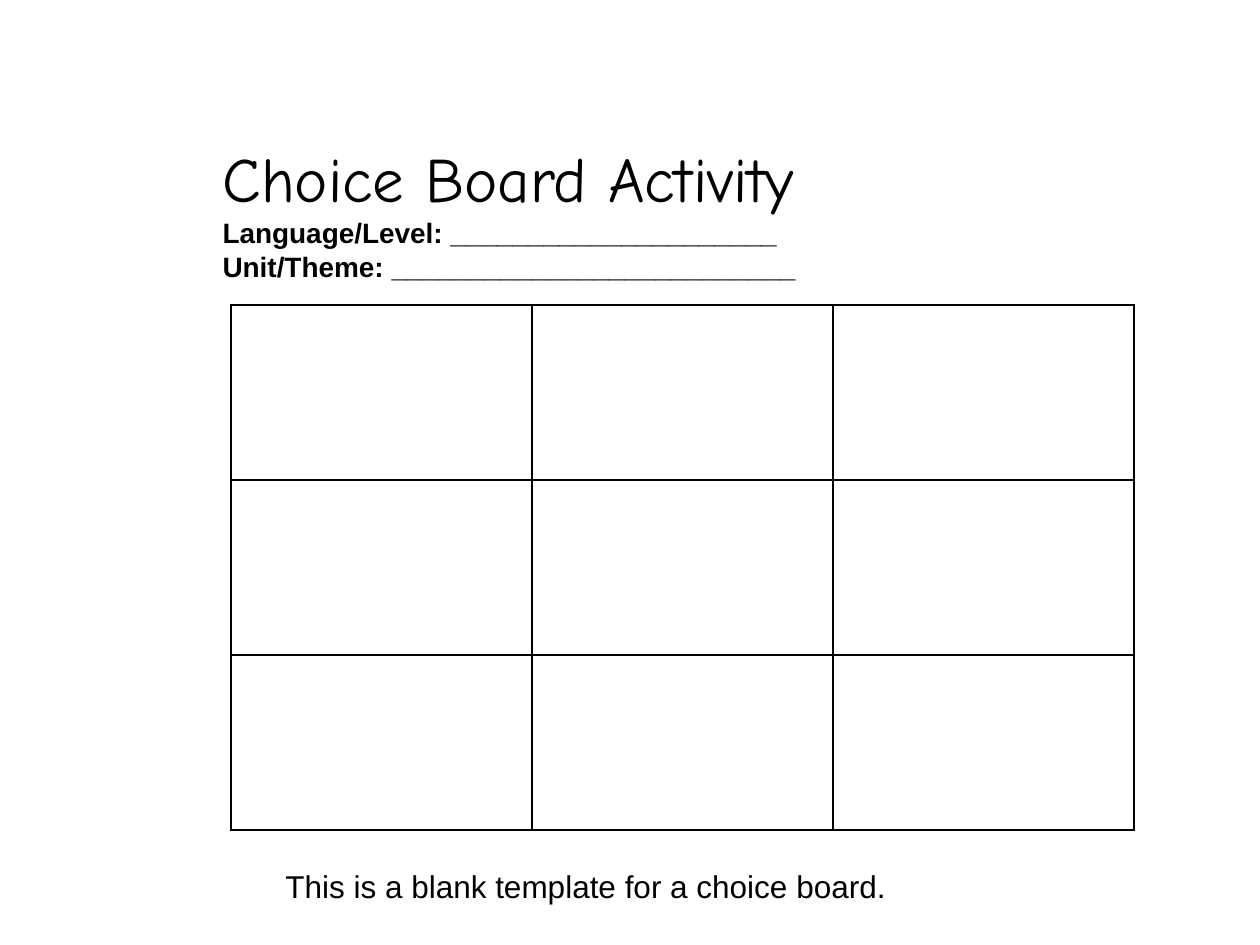
import pptx
import pptx.dml.color
import pptx.enum.text
import pptx.oxml
import pptx.oxml.ns
import pptx.util

EMU_PER_PX = 914400 / 126
COLORS = {"ink": "000000"}
GRID_SIZE = 3
CELL_WIDTH, CELL_HEIGHT = 301, 175


def px(length):
    return pptx.util.Emu(round(length * EMU_PER_PX))


def place(shape, left, top, width, height):
    shape.left, shape.top = px(left), px(top)
    shape.width, shape.height = px(width), px(height)


def write_lines(frame, lines):
    """Fill a text frame with (text, font name, size, bold) lines."""
    frame.word_wrap = True
    frame.auto_size = pptx.enum.text.MSO_AUTO_SIZE.NONE
    for index, (text, font_name, size, bold) in enumerate(lines):
        para = frame.paragraphs[0] if index == 0 else frame.add_paragraph()
        para.text = text
        para.alignment = pptx.enum.text.PP_ALIGN.LEFT
        para.font.name = font_name
        para.font.size = pptx.util.Pt(size)
        para.font.bold = bold
        para.font.color.rgb = pptx.dml.color.RGBColor.from_string(COLORS["ink"])


def add_heading(slide):
    title = slide.shapes.title
    place(title, 210, 130, 892, 159)
    write_lines(title.text_frame, [
        ("Choice Board Activity", "Comic Neue", 36, False),
        ("Language/Level: " + "_" * 21, "Arial", 16, True),
        ("Unit/Theme: " + "_" * 26, "Arial", 16, True),
    ])
    title.text_frame.vertical_anchor = pptx.enum.text.MSO_ANCHOR.BOTTOM


def outline_cell(cell):
    properties = cell._tc.get_or_add_tcPr()
    for side in ("lnL", "lnR", "lnT", "lnB"):
        properties.append(pptx.oxml.parse_xml(
            f'<a:{side} {pptx.oxml.ns.nsdecls("a")} w="{pptx.util.Pt(1)}">'
            f'<a:solidFill><a:srgbClr val="{COLORS["ink"]}"/></a:solidFill>'
            f'</a:{side}>'))


def add_choice_board(slide, left, top):
    board = slide.shapes.add_table(
        GRID_SIZE, GRID_SIZE, px(left), px(top),
        px(GRID_SIZE * CELL_WIDTH), px(GRID_SIZE * CELL_HEIGHT)).table
    board.first_row = False
    board.horz_banding = False
    for column in board.columns:
        column.width = px(CELL_WIDTH)
    for row in board.rows:
        row.height = px(CELL_HEIGHT)
    for cell in board.iter_cells():
        outline_cell(cell)
        cell.fill.background()


def add_caption(slide):
    box = slide.shapes.add_textbox(px(273), px(861), px(903), px(50))
    write_lines(box.text_frame, [
        ("This is a blank template for a choice board.", "Arial", 18, False),
    ])


def main():
    deck = pptx.Presentation()
    deck.slide_width, deck.slide_height = px(1260), px(945)
    slide = deck.slides.add_slide(deck.slide_layouts.get_by_name("Title Only"))
    add_choice_board(slide, 231, 305)
    add_heading(slide)
    add_caption(slide)
    deck.save("out.pptx")


if __name__ == "__main__":
    main()
